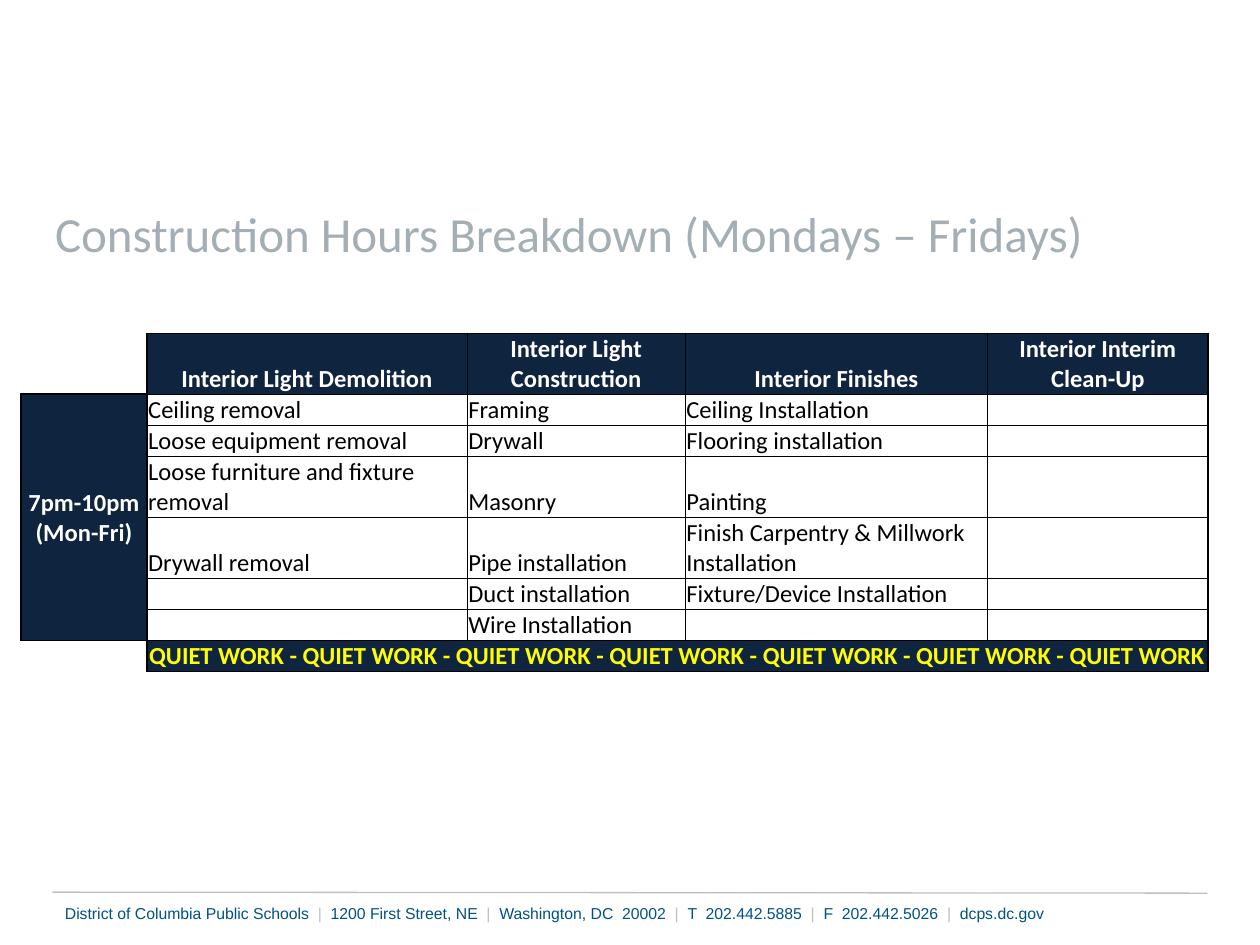
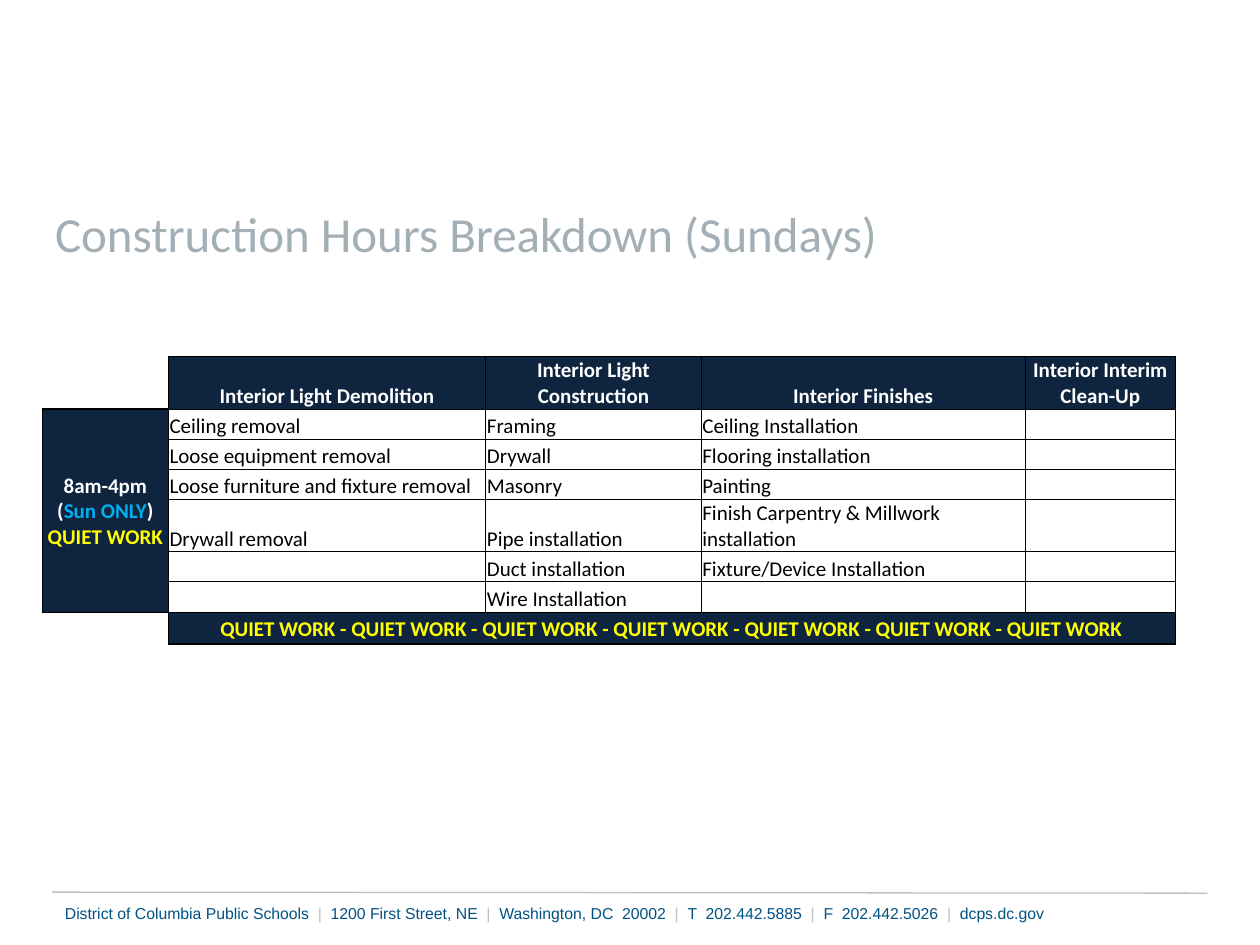
from dataclasses import dataclass
from enum import Enum
from itertools import cycle
from lxml.etree import SubElement
from pptx import Presentation
from pptx.dml.color import RGBColor
from pptx.enum.shapes import MSO_CONNECTOR
from pptx.enum.text import MSO_ANCHOR, PP_ALIGN
from pptx.oxml.ns import qn
from pptx.slide import Slide
from pptx.table import Table, _Cell
from pptx.text.text import TextFrame, _Paragraph
from pptx.util import Pt

NAVY = RGBColor(0x0F, 0x24, 0x3E)
WHITE = RGBColor(0xFF, 0xFF, 0xFF)
BLACK = RGBColor(0x00, 0x00, 0x00)
YELLOW = RGBColor(0xFF, 0xFF, 0x00)
SKY = RGBColor(0x00, 0xB0, 0xF0)
TITLE_GRAY = RGBColor(0xA4, 0xAE, 0xB5)
FOOTER_BLUE = RGBColor(0x00, 0x52, 0x83)
RULE_GRAY = RGBColor(0xBF, 0xBF, 0xBF)

PLAIN_TABLE_STYLE = "{2D5ABB26-0587-4C30-8999-92F81FD0307C}"
EMPTY_CELL_SIZE = 12
THIN, THICK = 0.5, 1.0
HEADER_ROW, FIRST_BODY_ROW, LAST_BODY_ROW, BANNER_ROW = 1, 2, 7, 8

FOOTER_PARTS = [
    "District of Columbia Public Schools  ", "|",
    "  1200 First Street, NE  ", "|",
    "  Washington, DC  20002 ", " |  ",
    "T  202.442.5885 ", " |  ",
    "F  202.442.5026 ", " |  ",
    "dcps.dc.gov",
]
HEADINGS = ["Interior Light Demolition", "Interior Light Construction",
            "Interior Finishes", "Interior Interim Clean-Up"]
DEMOLITION = ["Ceiling removal", "Loose equipment removal",
              "Loose furniture and fixture removal", "Drywall removal"]
CONSTRUCTION = ["Framing", "Drywall", "Masonry", "Pipe installation",
                "Duct installation", "Wire Installation"]
BANNER = " - ".join(["QUIET WORK"] * 7)

Spans = list[tuple[str, RGBColor]]


class Zone(Enum):
    BLANK = "blank"
    HEADER = "header"
    TIME = "time"
    BODY = "body"
    BANNER = "banner"


@dataclass
class Schedule:
    title: str
    left: float
    top: float
    widths: list[float]
    heights: list[float]
    size: float
    hours: Spans
    carpentry: str
    cleanup_columns: int

    def zone(self, row: int, column: int) -> Zone:
        if not HEADER_ROW <= row <= BANNER_ROW or not 0 <= column < len(self.widths) - 1:
            return Zone.BLANK
        if column == 0:
            return Zone.TIME if FIRST_BODY_ROW <= row <= LAST_BODY_ROW else Zone.BLANK
        if row == HEADER_ROW:
            return Zone.HEADER
        return Zone.BANNER if row == BANNER_ROW else Zone.BODY


SCHEDULES = [
    Schedule(
        title="Construction Hours Breakdown (Mondays – Fridays)",
        left=12, top=168,
        widths=[72, 183, 124.6, 172.8, 57.6, 68.4, 97.2],
        heights=[22.5, 34.8, 17.8, 17.8, 34.8, 34.8, 17.8, 17.8, 17.8, 15.4],
        size=14,
        hours=[("7pm-10pm (Mon-Fri)", WHITE)],
        carpentry="Finish Carpentry & Millwork Installation",
        cleanup_columns=2,
    ),
    Schedule(
        title="Construction Hours Breakdown (Sundays)",
        left=24.2, top=185.8,
        widths=[72, 181.4, 123.1, 185.2, 85.8, 78.4],
        heights=[18, 30, 17.2, 17.2, 17.2, 30, 17.2, 17.6, 18, 16.4],
        size=12,
        hours=[("8am-4pm (", WHITE), ("Sun ONLY", SKY), (") ", WHITE), ("QUIET WORK", YELLOW)],
        carpentry="Finish Carpentry & Millwork installation",
        cleanup_columns=1,
    ),
]


def write_spans(para: _Paragraph, spans: Spans, font: str, size: float,
                bold: bool = False) -> None:
    for text, color in spans:
        span = para.add_run()
        span.text = text
        span.font.name = font
        span.font.size = Pt(size)
        span.font.bold = bold
        span.font.color.rgb = color


def add_box(page: Slide, left: float, top: float, width: float, height: float,
            anchor: MSO_ANCHOR) -> TextFrame:
    frame = page.shapes.add_textbox(Pt(left), Pt(top), Pt(width), Pt(height)).text_frame
    frame.word_wrap = True
    frame.vertical_anchor = anchor
    return frame


def add_footer(page: Slide) -> None:
    rule = page.shapes.add_connector(MSO_CONNECTOR.STRAIGHT, Pt(30), Pt(509.8), Pt(690), Pt(510.4))
    rule.line.color.rgb = RULE_GRAY
    rule.line.width = Pt(0.75)
    SubElement(rule._element.spPr, qn("a:effectLst"))
    para = add_box(page, 30, 512.6, 660, 18, MSO_ANCHOR.MIDDLE).paragraphs[0]
    para.alignment = PP_ALIGN.JUSTIFY
    write_spans(para, list(zip(FOOTER_PARTS, cycle([FOOTER_BLUE, RULE_GRAY]))), "Arial", 9)


def add_title(page: Slide, title: str) -> None:
    frame = add_box(page, 24.4, 123, 660, 30.2, MSO_ANCHOR.BOTTOM)
    write_spans(frame.paragraphs[0], [(title, TITLE_GRAY)], "Calibri", 28)


def edge_width(zone: Zone, neighbour: Zone) -> float:
    pair = {zone, neighbour}
    if pair == {Zone.BLANK}:
        return 0
    return THIN if pair <= {Zone.HEADER, Zone.BODY} else THICK


def set_border(cell: _Cell, side: str, width: float) -> None:
    line = SubElement(cell._tc.get_or_add_tcPr(), qn(f"a:ln{side}"), w=str(int(Pt(width))))
    if width:
        fill = SubElement(line, qn("a:solidFill"))
        SubElement(fill, qn("a:srgbClr"), val=str(BLACK))
    else:
        SubElement(line, qn("a:noFill"))


def style_cell(cell: _Cell, schedule: Schedule, row: int, column: int) -> None:
    zone = schedule.zone(row, column)
    for side, down, across in [("L", 0, -1), ("R", 0, 1), ("T", -1, 0), ("B", 1, 0)]:
        set_border(cell, side, edge_width(zone, schedule.zone(row + down, column + across)))
    if zone == Zone.BLANK:
        cell.fill.background()
    else:
        cell.fill.solid()
        cell.fill.fore_color.rgb = WHITE if zone == Zone.BODY else NAVY
    cell.margin_left = cell.margin_right = cell.margin_top = Pt(0.7)
    cell.margin_bottom = Pt(0)
    middle = zone in (Zone.TIME, Zone.BANNER)
    cell.vertical_anchor = MSO_ANCHOR.MIDDLE if middle else MSO_ANCHOR.BOTTOM
    para = cell.text_frame.paragraphs[0]
    para.alignment = PP_ALIGN.LEFT if zone == Zone.BODY else PP_ALIGN.CENTER
    SubElement(para._p, qn("a:endParaRPr"), sz=str(EMPTY_CELL_SIZE * 100))


def merge_cells(table: Table, schedule: Schedule) -> None:
    last_column = len(schedule.widths) - 2
    table.cell(FIRST_BODY_ROW, 0).merge(table.cell(LAST_BODY_ROW, 0))
    table.cell(BANNER_ROW, 1).merge(table.cell(BANNER_ROW, last_column))
    if schedule.cleanup_columns > 1:
        for row in range(len(schedule.heights)):
            if row != BANNER_ROW:
                table.cell(row, 4).merge(table.cell(row, last_column))


def add_schedule(page: Slide, schedule: Schedule) -> None:
    widths, heights = schedule.widths, schedule.heights
    frame = page.shapes.add_table(len(heights), len(widths), Pt(schedule.left), Pt(schedule.top),
                                  Pt(sum(widths)), Pt(sum(heights)))
    table = frame.table
    table.first_row = table.horz_banding = False
    table._tbl.tblPr.find(qn("a:tableStyleId")).text = PLAIN_TABLE_STYLE
    for column, width in zip(table.columns, widths):
        column.width = Pt(width)
    for row, height in zip(table.rows, heights):
        row.height = Pt(height)
    merge_cells(table, schedule)
    for row in range(len(heights)):
        for column in range(len(widths)):
            style_cell(table.cell(row, column), schedule, row, column)

    def write(row: int, column: int, spans: Spans, bold: bool = True) -> None:
        para = table.cell(row, column).text_frame.paragraphs[0]
        write_spans(para, spans, "Calibri", schedule.size, bold)

    for column, heading in enumerate(HEADINGS, 1):
        write(HEADER_ROW, column, [(heading, WHITE)])
    finishes = ["Ceiling Installation", "Flooring installation", "Painting",
                schedule.carpentry, "Fixture/Device Installation"]
    for column, tasks in enumerate([DEMOLITION, CONSTRUCTION, finishes], 1):
        for row, task in enumerate(tasks, FIRST_BODY_ROW):
            write(row, column, [(task, BLACK)], bold=False)
    write(FIRST_BODY_ROW, 0, schedule.hours)
    write(BANNER_ROW, 1, [(BANNER, YELLOW)])


def main() -> None:
    deck = Presentation()
    deck.slide_width, deck.slide_height = Pt(720), Pt(540)
    for schedule in SCHEDULES:
        page = deck.slides.add_slide(deck.slide_layouts[6])
        add_footer(page)
        add_title(page, schedule.title)
        add_schedule(page, schedule)
    deck.save("out.pptx")


if __name__ == "__main__":
    main()
